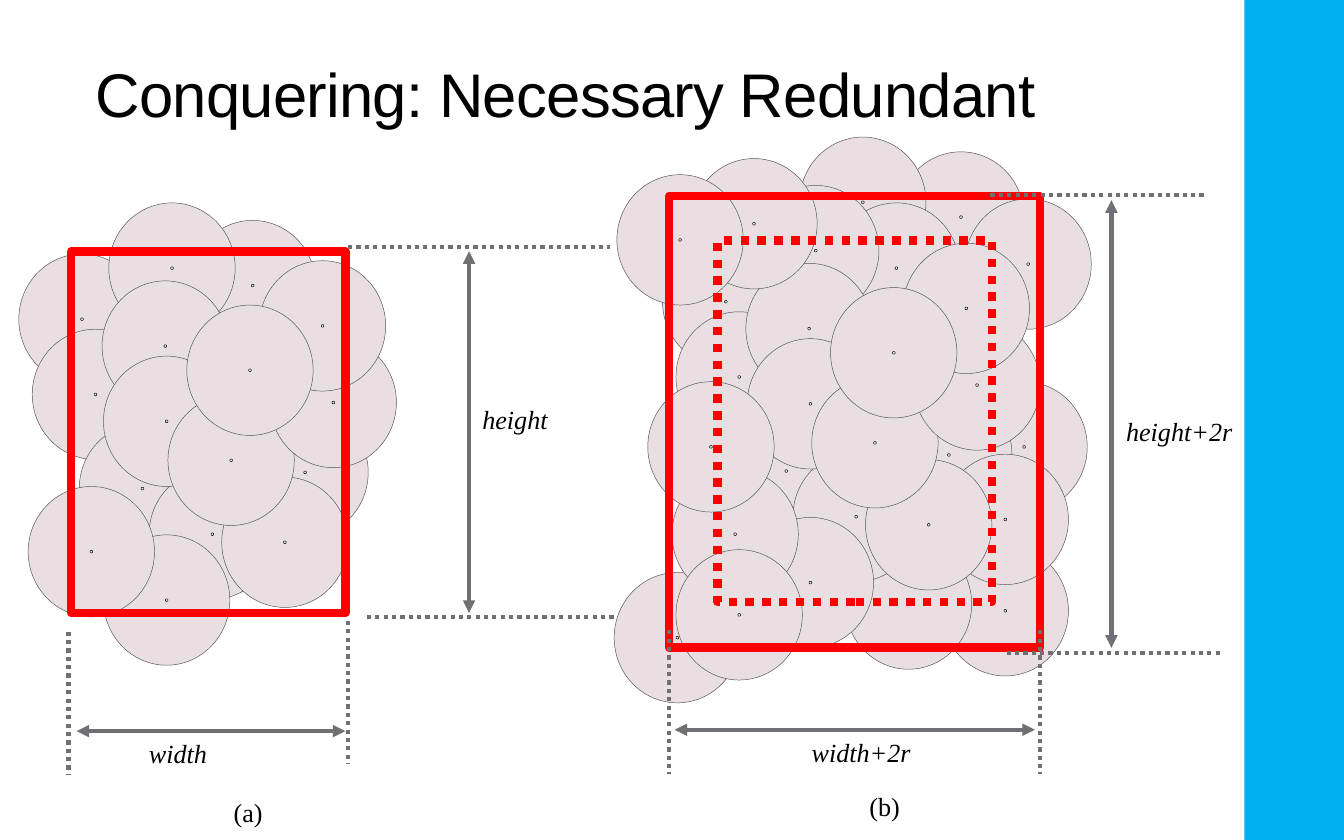
from pptx import Presentation
from pptx.dml.color import RGBColor
from pptx.enum.dml import MSO_LINE
from pptx.enum.shapes import MSO_CONNECTOR, MSO_SHAPE
from pptx.enum.text import MSO_ANCHOR, MSO_AUTO_SIZE, PP_ALIGN
from pptx.oxml.ns import qn
from pptx.util import Inches, Pt
from lxml import etree

RECT, OVAL = MSO_SHAPE.RECTANGLE, MSO_SHAPE.OVAL
STRAIGHT = MSO_CONNECTOR.STRAIGHT
DOTS = MSO_LINE.ROUND_DOT
LEFT, BOTTOM = PP_ALIGN.LEFT, MSO_ANCHOR.BOTTOM
FIXED, GROW = MSO_AUTO_SIZE.NONE, MSO_AUTO_SIZE.SHAPE_TO_FIT_TEXT

BLACK = RGBColor(0x00, 0x00, 0x00)
BLUE = RGBColor(0x00, 0xB0, 0xF0)
RED = RGBColor(0xFF, 0x00, 0x00)
GRAY = RGBColor(0x6F, 0x6F, 0x74)
EDGE = RGBColor(0x52, 0x52, 0x56)
ROSE = RGBColor(0xE9, 0xDF, 0xE3)

DISC_W, DISC_H, DOT = 0.94, 0.97, 0.02
CORE = [(-0.39, 0.02), (0.88, -0.23), (-0.29, 0.58), (0.28, -0.36),
        (0.23, 0.22), (0.06, 1.28), (0.58, 1.62), (1.27, 1.16),
        (1.12, 1.68), (0.24, 0.78), (0.72, 1.07), (1.48, 0.64),
        (1.4, 0.07), (0.86, 0.4), (0.24, 2.11), (-0.32, 1.75)]
RING = [(-0.75, 2.52), (1.36, -0.61), (0.63, -0.72), (1.86, -0.26),
        (-0.18, -0.56), (1.69, 2.32), (0.97, 2.27), (1.83, 1.1),
        (1.69, 1.64), (-0.5, 1.1), (-0.73, -0.44), (-0.29, 2.35)]
FULL = (RING[:3] + CORE[:1] + RING[3:4] + CORE[1:6] + RING[4:8]
        + CORE[6:8] + RING[8:9] + CORE[8:] + RING[9:])


def write(frame, text, font="Times New Roman", size=14, italic=False, space=None):
    para = frame.paragraphs[0]
    para.alignment = LEFT
    run = para.add_run()
    run.text = text
    run.font.name = font
    run.font.size = Pt(size)
    run.font.italic = italic
    run.font.color.rgb = BLACK
    if space:
        run.font._element.set("spc", str(space))
    return para


def shape(shapes, kind, box, fill=None, line=None, width=0.25, dash=None):
    item = shapes.add_shape(kind, *map(Inches, box))
    item.shadow.inherit = False
    if fill is None:
        item.fill.background()
    else:
        item.fill.solid()
        item.fill.fore_color.rgb = fill
    if line is None:
        item.line.fill.background()
    else:
        item.line.color.rgb = line
        item.line.width = Pt(width)
        if dash:
            item.line.dash_style = dash


def stroke(shapes, start, end, dash=None):
    item = shapes.add_connector(STRAIGHT, *map(Inches, (*start, *end)))
    item.line.color.rgb = GRAY
    item.line.width = Pt(2.25)
    props = item._element.spPr
    if dash:
        item.line.dash_style = dash
    else:
        for tag in ("a:headEnd", "a:tailEnd"):
            etree.SubElement(props.find(qn("a:ln")), qn(tag), type="triangle")
    etree.SubElement(props, qn("a:effectLst"))


def label(shapes, left, top, width, text, italic=True):
    item = shapes.add_textbox(*map(Inches, (left, top, width, 0.4)))
    item.text_frame.word_wrap = False
    item.text_frame.auto_size = GROW
    write(item.text_frame, text, italic=italic)


def discs(shapes, left, top, spots):
    for dx, dy in spots:
        pair = shapes.add_group_shape().shapes
        x, y = left + dx, top + dy
        shape(pair, OVAL, (x, y, DISC_W, DISC_H), ROSE, EDGE)
        mid = (x + (DISC_W - DOT) / 2, y + (DISC_H - DOT) / 2)
        shape(pair, OVAL, (*mid, DOT, DOT), ROSE, BLACK)


def head(slide, box):
    title = slide.shapes.title
    title.left, title.top, title.width, title.height = map(Inches, box)
    frame = title.text_frame
    frame.word_wrap = True
    frame.auto_size = FIXED
    frame.vertical_anchor = BOTTOM
    para = write(frame, "Conquering: Necessary Redundant",
                 font="Arial", size=33, space=-40)
    para.line_spacing = 0.9


def small(shapes, box):
    left, top, width, height = box
    right, base = left + width, top + height
    discs(shapes, left, top, CORE)
    shape(shapes, RECT, box, line=RED, width=4.5)
    stroke(shapes, (left + 0.04, base + 0.88), (right, base + 0.88))
    stroke(shapes, (right + 0.92, base), (right + 0.92, top))
    stroke(shapes, (right + 0.16, base + 0.03), (right + 2.12, base + 0.03), DOTS)
    stroke(shapes, (right + 0.02, top - 0.03), (right + 1.97, top - 0.03), DOTS)
    for x, y in ((left - 0.02, base + 0.14), (right + 0.02, base + 0.06)):
        stroke(shapes, (x, y), (x, y + 1.06), DOTS)
    label(shapes, left + 0.48, base + 0.88, 0.74, "width")
    label(shapes, right + 0.92, top + 1.08, 0.81, "height")
    label(shapes, left + 1.11, base + 1.32, 0.48, "(a)", italic=False)


def large(shapes, box, inner):
    left, top, width, height = box
    right, base = left + width, top + height
    discs(shapes, left + 0.34, top + 0.28, FULL)
    shape(shapes, RECT, box, line=RED, width=4.5)
    stroke(shapes, (left + 0.04, base + 0.61), (right - 0.04, base + 0.61))
    stroke(shapes, (right + 0.53, base), (right + 0.53, top + 0.03))
    for x in (left, right):
        stroke(shapes, (x, base - 0.13), (x, base + 0.94), DOTS)
    for x, y in ((right - 0.25, base + 0.04), (right - 0.37, top - 0.01)):
        stroke(shapes, (x, y), (x + 1.6, y), DOTS)
    label(shapes, left + 0.96, base + 0.61, 1.15, "width+2r")
    label(shapes, right + 0.54, top + 1.58, 1.19, "height+2r")
    label(shapes, left + 1.39, base + 1.01, 0.48, "(b)", italic=False)
    shape(shapes, RECT, (left + 0.36, top + 0.33, *inner),
          line=RED, width=4.5, dash=DOTS)


def main():
    deck = Presentation()
    deck.slide_width, deck.slide_height = Inches(10), Inches(6.25)
    slide = deck.slides.add_slide(deck.slide_layouts[5])
    core = (2.04, 2.69)
    shape(slide.shapes, RECT, (9.26, 0, 0.74, 6.25), BLUE)
    head(slide, (0.61, 0.33, 8.37, 0.69))
    small(slide.shapes, (0.53, 1.87, *core))
    group = slide.shapes.add_group_shape()
    large(group.shapes, (4.98, 1.46, 2.76, 3.36), core)
    deck.save("out.pptx")


if __name__ == "__main__":
    main()
